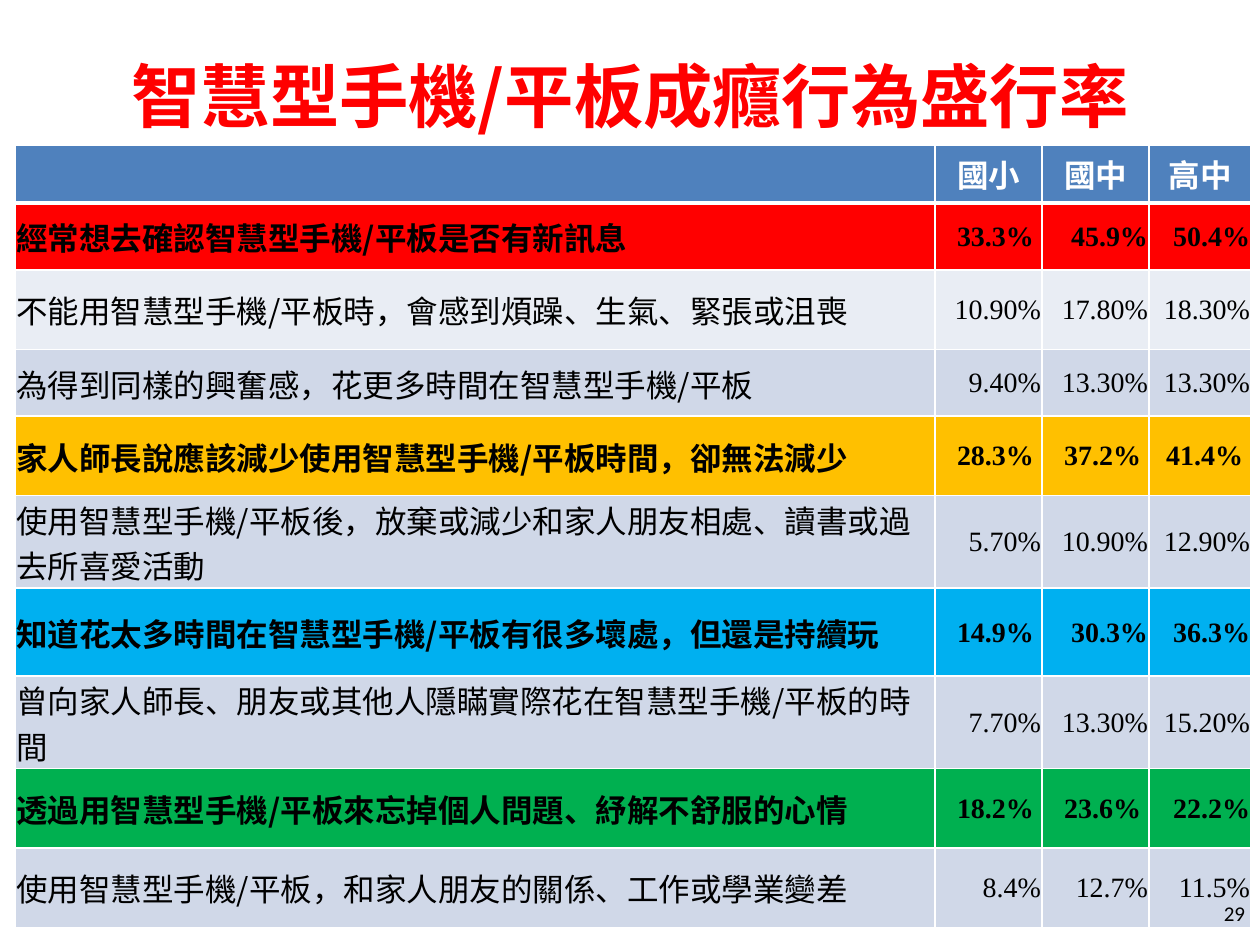
from dataclasses import dataclass

from lxml.etree import SubElement
from pptx import Presentation
from pptx.dml.color import RGBColor
from pptx.enum.text import MSO_ANCHOR as Anchor, PP_ALIGN as Align
from pptx.oxml.ns import qn
from pptx.util import Inches, Pt


@dataclass(frozen=True)
class Theme:
    cjk: str = "Noto Sans CJK SC"
    number: str = "Times New Roman"
    latin: str = "Calibri"
    title_size: float = 39.6
    label_size: int = 18
    value_size: int = 16
    page_size: int = 12
    black: str = "000000"
    white: str = "FFFFFF"
    header: str = "4F81BD"
    bands: tuple = ("E9EDF4", "D0D8E8")
    red: str = "FF0000"
    amber: str = "FFC000"
    blue: str = "00B0F0"
    green: str = "00B050"


theme = Theme()

LEVELS = ["", "國小", "國中", "高中"]
# Highlight colour (None for a plain banded row), row height, cell texts
ROWS = [
    (theme.red, 0.53, ["經常想去確認智慧型手機/平板是否有新訊息", "33.3% ", "45.9%", "50.4%"]),
    (None, 0.63, ["不能用智慧型手機/平板時，會感到煩躁、生氣、緊張或沮喪", "10.90%", "17.80%", "18.30%"]),
    (None, 0.53, ["為得到同樣的興奮感，花更多時間在智慧型手機/平板", "9.40%", "13.30%", "13.30%"]),
    (theme.amber, 0.63, ["家人師長說應該減少使用智慧型手機/平板時間，卻無法減少", "28.3% ", "37.2% ", "41.4% "]),
    (None, 0.63, ["使用智慧型手機/平板後，放棄或減少和家人朋友相處、讀書或過去所喜愛活動", "5.70%", "10.90%", "12.90%"]),
    (theme.blue, 0.7, ["知道花太多時間在智慧型手機/平板有很多壞處，但還是持續玩", "14.9% ", "30.3%", "36.3%"]),
    (None, 0.63, ["曾向家人師長、朋友或其他人隱瞞實際花在智慧型手機/平板的時間", "7.70%", "13.30%", "15.20%"]),
    (theme.green, 0.63, ["透過用智慧型手機/平板來忘掉個人問題、紓解不舒服的心情", "18.2% ", "23.6% ", "22.2%"]),
    (None, 0.63, ["使用智慧型手機/平板，和家人朋友的關係、工作或學業變差", "8.4%", "12.7%", "11.5%"]),
]
HEADER_HEIGHT = 0.41
COLUMN_WIDTHS = [7.3, 0.85, 0.85, 0.81]


def write(frame, text, align, font, size, color, bold=False):
    para = frame.paragraphs[0]
    para.alignment = align
    span = para.add_run()
    span.text = text
    for name, value in {"name": font, "size": Pt(size), "bold": bold}.items():
        setattr(span.font, name, value)
    span.font.color.rgb = RGBColor.from_string(color)
    SubElement(span.font._element, qn("a:ea"), typeface=font)


def style_cell(cell, fill, top=1, bottom=1):
    """Give the cell white borders, widths in points, and a solid fill."""
    properties = cell._tc.get_or_add_tcPr()
    for side, width in {"L": 1, "R": 1, "T": top, "B": bottom}.items():
        line = SubElement(properties, qn(f"a:ln{side}"), w=str(Pt(width)))
        SubElement(SubElement(line, qn("a:solidFill")), qn("a:srgbClr"), val=theme.white)
    cell.fill.solid()
    cell.fill.fore_color.rgb = RGBColor.from_string(fill)


deck = Presentation()
deck.slide_width, deck.slide_height = Inches(10), Inches(7.5)
page = deck.slides.add_slide(deck.slide_layouts[6])

# Prevalence table
table = page.shapes.add_table(
    len(ROWS) + 1, len(LEVELS), Inches(0.12), Inches(1.15), Inches(9.8), Inches(5.95)
).table
for column, width in zip(table.columns, COLUMN_WIDTHS):
    column.width = Inches(width)

table.rows[0].height = Inches(HEADER_HEIGHT)
for index, level in enumerate(LEVELS):
    cell = table.cell(0, index)
    style_cell(cell, theme.header, bottom=3)
    if level:
        write(cell.text_frame, level, Align.CENTER, theme.cjk, theme.label_size, theme.white, True)

cell_format = {
    "vertical_anchor": Anchor.MIDDLE,
    "margin_left": Inches(0.01),
    "margin_top": Inches(0.01),
    "margin_right": Inches(0.01),
    "margin_bottom": 0,
}
for number, (highlight, height, texts) in enumerate(ROWS, start=1):
    table.rows[number].height = Inches(height)
    for index, text in enumerate(texts):
        cell = table.cell(number, index)
        for name, value in cell_format.items():
            setattr(cell, name, value)
        style_cell(cell, highlight or theme.bands[number % 2], top=3 if number == 1 else 1)
        align, font, size = (
            (Align.RIGHT, theme.number, theme.value_size) if index
            else (Align.LEFT, theme.cjk, theme.label_size)
        )
        write(cell.text_frame, text, align, font, size, theme.black, bool(highlight))

# Title and page number
for place, anchor, content in [
    ((0.5, 0.13, 9, 1.25), Anchor.MIDDLE,
     ("智慧型手機/平板成癮行為盛行率", Align.CENTER, theme.cjk, theme.title_size, theme.red, True)),
    ((7.65, 7.1, 2.33, 0.4), Anchor.TOP,
     ("29", Align.RIGHT, theme.latin, theme.page_size, theme.black)),
]:
    box = page.shapes.add_textbox(*map(Inches, place))
    box.text_frame.word_wrap = True
    box.text_frame.vertical_anchor = anchor
    write(box.text_frame, *content)

deck.save("out.pptx")
